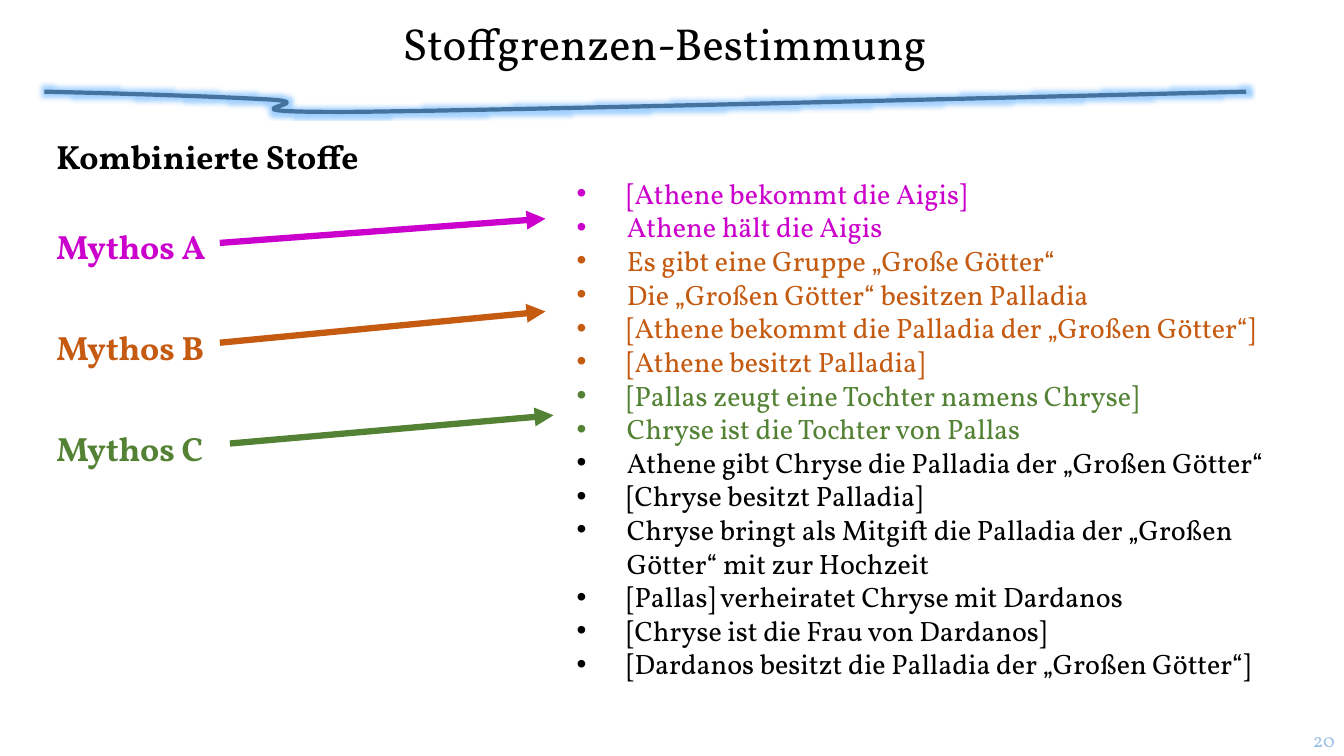
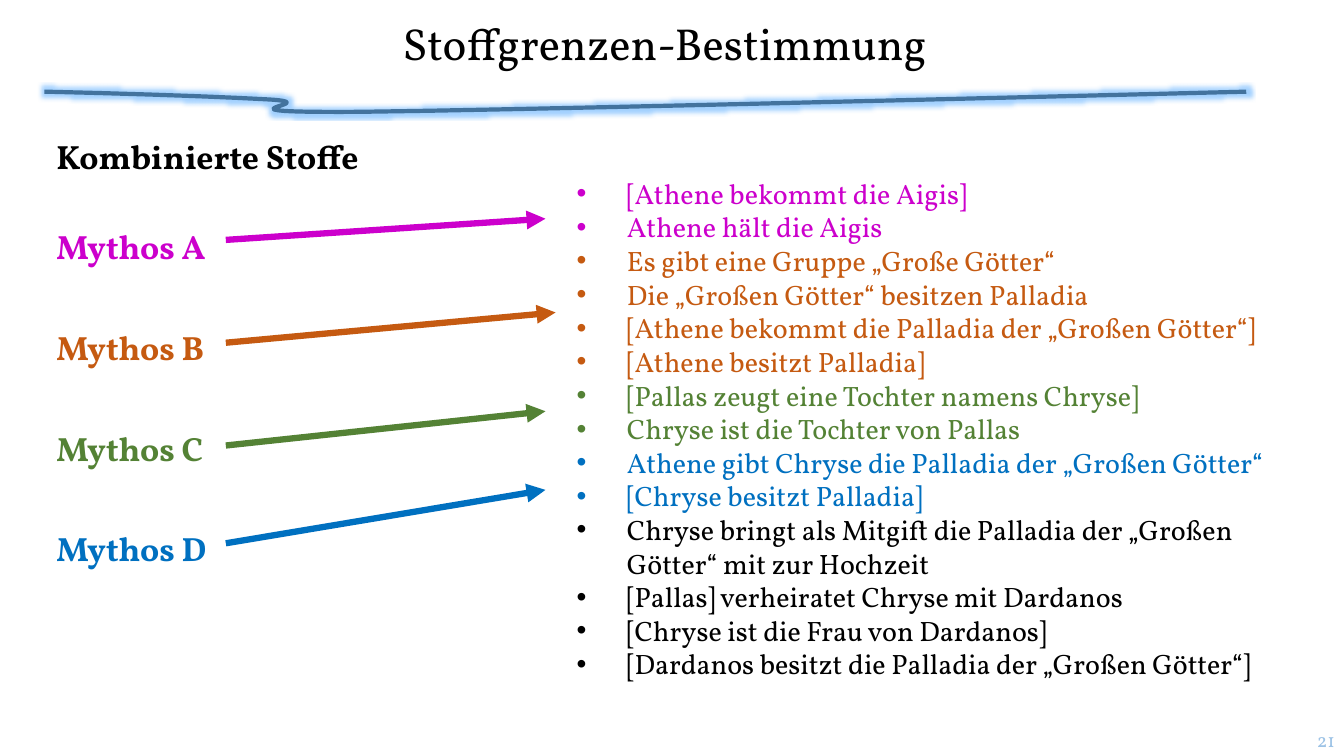
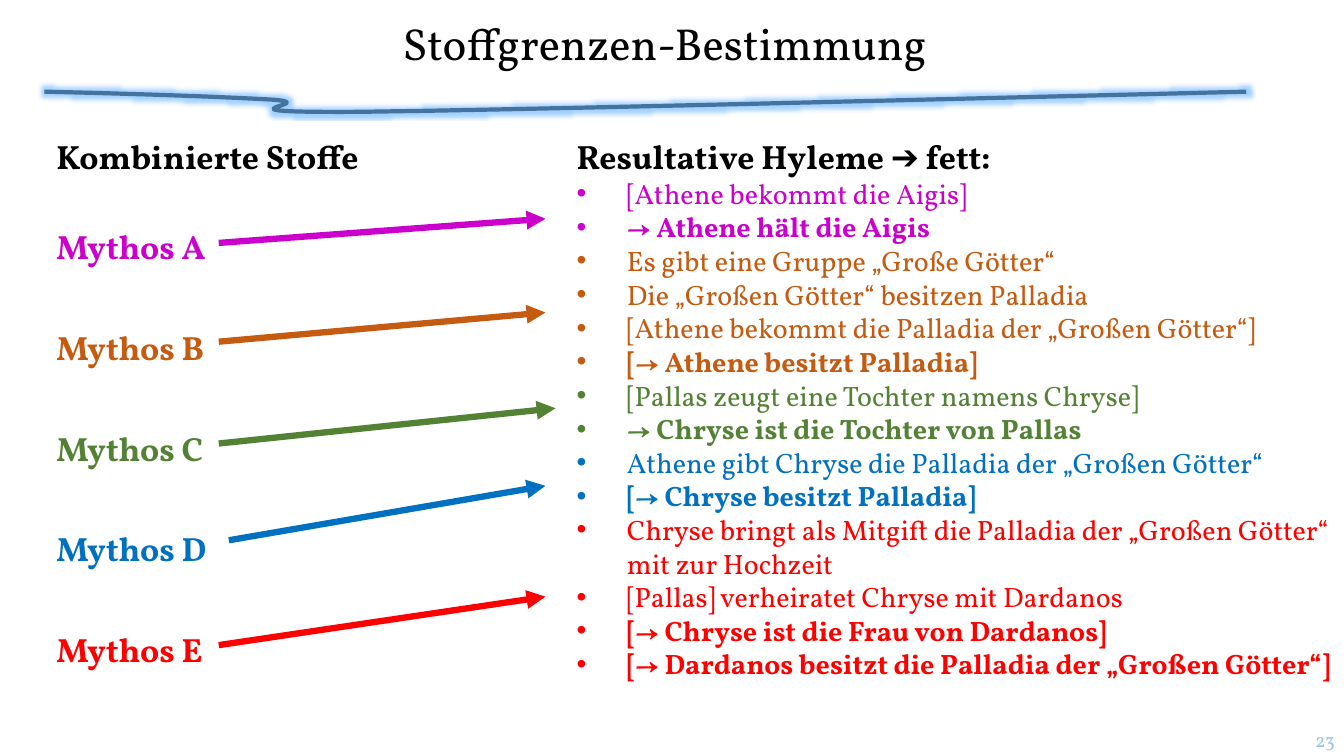
from dataclasses import dataclass
from typing import NamedTuple

from lxml import etree
from pptx import Presentation
from pptx import util as u
from pptx.dml.color import RGBColor
from pptx.enum import shapes, text
from pptx.oxml.ns import qn
from pptx.slide import Slide

FONT = "Vollkorn"
BLACK = "000000"
RULE_BLUE = "43739E"
GLOW_BLUE = "66B3FF"
NUMBER_BLUE = "9DC3E6"

TITLE = "Stoffgrenzen-Bestimmung"
LABEL_HEADING = "Kombinierte Stoffe"
TITLE_ONLY = 5
LINE_HEIGHT = 1.2
HEADING_SIZE = 24
LIST_TOP = 1.3

RULE_START = (0.44, 0.91)
RULE_CURVES = [
    ((1.31, 0.93), (2.19, 0.96), (2.71, 0.99)),
    ((3.23, 1.03), (1.95, 1.12), (3.56, 1.11)),
    ((5.17, 1.09), (8.76, 1.0), (12.36, 0.91)),
]
STEPS_PER_CURVE = 24


class Point(NamedTuple):
    x: float
    y: float


class Box(NamedTuple):
    left: float
    top: float
    width: float
    height: float


class Arrow(NamedTuple):
    start: Point
    end: Point


class Statement(NamedTuple):
    wording: str
    resultative: bool = False


@dataclass
class Myth:
    letter: str
    color: str
    statements: list[Statement]


@dataclass
class Step:
    """One slide: an arrow for every myth identified so far."""
    number: int
    arrows: list[Arrow]
    list_width: float = 7.55
    list_heading: str = ""


MYTHS = [
    Myth("A", "CC00CC", [
        Statement("[Athene bekommt die Aigis]"),
        Statement("Athene hält die Aigis", True),
    ]),
    Myth("B", "C55A11", [
        Statement("Es gibt eine Gruppe „Große Götter“"),
        Statement("Die „Großen Götter“ besitzen Palladia"),
        Statement("[Athene bekommt die Palladia der „Großen Götter“]"),
        Statement("[Athene besitzt Palladia]", True),
    ]),
    Myth("C", "548235", [
        Statement("[Pallas zeugt eine Tochter namens Chryse]"),
        Statement("Chryse ist die Tochter von Pallas", True),
    ]),
    Myth("D", "0070C0", [
        Statement("Athene gibt Chryse die Palladia der „Großen Götter“"),
        Statement("[Chryse besitzt Palladia]", True),
    ]),
    Myth("E", "FF0000", [
        Statement("Chryse bringt als Mitgift die Palladia der „Großen Götter“ mit zur Hochzeit"),
        Statement("[Pallas] verheiratet Chryse mit Dardanos"),
        Statement("[Chryse ist die Frau von Dardanos]", True),
        Statement("[Dardanos besitzt die Palladia der „Großen Götter“]", True),
    ]),
]

STEPS = [
    Step(20, [
        Arrow(Point(2.18, 2.41), Point(5.41, 2.17)),
        Arrow(Point(2.18, 3.4), Point(5.41, 3.09)),
        Arrow(Point(2.28, 4.4), Point(5.49, 4.12)),
    ]),
    Step(21, [
        Arrow(Point(2.24, 2.38), Point(5.41, 2.17)),
        Arrow(Point(2.24, 3.4), Point(5.51, 3.1)),
        Arrow(Point(2.24, 4.42), Point(5.41, 4.08)),
        Arrow(Point(2.24, 5.39), Point(5.41, 4.86)),
    ]),
    Step(23, [
        Arrow(Point(2.17, 2.41), Point(5.41, 2.17)),
        Arrow(Point(2.17, 3.39), Point(5.41, 3.1)),
        Arrow(Point(2.17, 4.4), Point(5.51, 4.05)),
        Arrow(Point(2.27, 5.36), Point(5.41, 4.82)),
        Arrow(Point(2.17, 6.4), Point(5.41, 5.92)),
    ], list_width=7.72, list_heading="Resultative Hyleme ➔ fett:"),
]


def rgb(color: str) -> RGBColor:
    return RGBColor.from_string(color)


def add_run(paragraph, wording: str, size: float, color: str = BLACK, bold: bool = False) -> None:
    run = paragraph.add_run()
    run.text = wording
    run.font.name = FONT
    run.font.size = u.Pt(size)
    run.font.bold = bold
    run.font.color.rgb = rgb(color)


def next_paragraph(frame):
    """Return the untouched first paragraph of a frame, or else a new one."""
    first = frame.paragraphs[0]
    return frame.add_paragraph() if first.runs else first


def add_text_frame(slide: Slide, box: Box):
    frame = slide.shapes.add_textbox(*map(u.Inches, box)).text_frame
    frame.word_wrap = True
    return frame


def add_bullet(paragraph) -> None:
    properties = paragraph._p.get_or_add_pPr()
    properties.set("marL", str(u.Inches(0.5)))
    properties.set("indent", str(u.Inches(-0.5)))
    etree.SubElement(properties, qn("a:buFont")).set("typeface", "Arial")
    etree.SubElement(properties, qn("a:buChar")).set("char", "•")


def set_title(slide: Slide) -> None:
    title = slide.shapes.title
    title.left, title.top, title.width, title.height = map(u.Inches, Box(0.46, 0, 12.27, 0.91))
    frame = title.text_frame
    frame.auto_size = text.MSO_AUTO_SIZE.NONE
    frame.vertical_anchor = text.MSO_ANCHOR.MIDDLE
    paragraph = frame.paragraphs[0]
    paragraph.alignment = text.PP_ALIGN.CENTER
    paragraph.line_spacing = 0.9
    add_run(paragraph, TITLE, 32)


def rule_points() -> list[tuple[int, int]]:
    """Sample the Bézier curves of the title rule."""
    points, start = [], RULE_START
    for first, second, end in RULE_CURVES:
        for step in range(1, STEPS_PER_CURVE + 1):
            t = step / STEPS_PER_CURVE
            weights = ((1 - t) ** 3, 3 * t * (1 - t) ** 2, 3 * t * t * (1 - t), t ** 3)
            corners = (start, first, second, end)
            x, y = (sum(w * c[axis] for w, c in zip(weights, corners)) for axis in (0, 1))
            points.append((u.Inches(x), u.Inches(y)))
        start = end
    return points


def draw_title_rule(slide: Slide) -> None:
    builder = slide.shapes.build_freeform(*map(u.Inches, RULE_START))
    builder.add_line_segments(rule_points(), close=False)
    rule = builder.convert_to_shape()
    rule.fill.background()
    rule.line.color.rgb = rgb(RULE_BLUE)
    rule.line.width = u.Pt(3)
    rule.shadow.inherit = False
    effects = rule.element.spPr.find(qn("a:effectLst"))
    glow = etree.SubElement(effects, qn("a:glow"), rad=str(u.Pt(5)))
    glow_color = etree.SubElement(glow, qn("a:srgbClr"), val=GLOW_BLUE)
    etree.SubElement(glow_color, qn("a:alpha"), val="60000")


def draw_number(slide: Slide, number: int) -> None:
    frame = add_text_frame(slide, Box(12.61, 7.19, 0.73, 0.29))
    frame.vertical_anchor = text.MSO_ANCHOR.MIDDLE
    paragraph = frame.paragraphs[0]
    paragraph.alignment = text.PP_ALIGN.RIGHT
    add_run(paragraph, str(number), 14, NUMBER_BLUE)


def draw_labels(slide: Slide, myths: list[Myth]) -> None:
    frame = add_text_frame(slide, Box(0.46, 1.34, 5.32, 6))
    heading = frame.paragraphs[0]
    heading.line_spacing = 0.9
    add_run(heading, LABEL_HEADING, HEADING_SIZE, bold=True)
    for index, myth in enumerate(myths):
        paragraph = frame.add_paragraph()
        paragraph.line_spacing = 0.9
        paragraph.space_before = u.Pt(46 if index else 39)
        add_run(paragraph, f"Mythos {myth.letter}", HEADING_SIZE, myth.color, bold=True)


def mark_resultative(wording: str) -> str:
    return f"[→ {wording[1:]}" if wording.startswith("[") else f"→ {wording}"


def draw_statements(slide: Slide, step: Step) -> None:
    """List all statements; those of myths not yet identified stay black."""
    skipped = 0 if step.list_heading else HEADING_SIZE * LINE_HEIGHT / 72
    frame = add_text_frame(slide, Box(5.62, LIST_TOP + skipped, step.list_width, 5.55 - skipped))
    if step.list_heading:
        add_run(frame.paragraphs[0], step.list_heading, HEADING_SIZE, bold=True)
    for index, myth in enumerate(MYTHS):
        color = myth.color if index < len(step.arrows) else BLACK
        for statement in myth.statements:
            marked = bool(step.list_heading) and statement.resultative
            wording = mark_resultative(statement.wording) if marked else statement.wording
            paragraph = next_paragraph(frame)
            add_bullet(paragraph)
            add_run(paragraph, wording, 20, color, bold=marked)


def draw_arrow(slide: Slide, arrow: Arrow, color: str) -> None:
    connector = slide.shapes.add_connector(
        shapes.MSO_CONNECTOR.STRAIGHT, *map(u.Inches, (*arrow.start, *arrow.end)))
    connector.line.color.rgb = rgb(color)
    connector.line.width = u.Pt(4.5)
    properties = connector.element.spPr
    etree.SubElement(properties.find(qn("a:ln")), qn("a:tailEnd"), type="triangle")
    etree.SubElement(properties, qn("a:effectLst"))


def build_slide(presentation, step: Step) -> None:
    slide = presentation.slides.add_slide(presentation.slide_layouts[TITLE_ONLY])
    identified = MYTHS[:len(step.arrows)]
    draw_title_rule(slide)
    set_title(slide)
    draw_labels(slide, identified)
    draw_number(slide, step.number)
    draw_statements(slide, step)
    for myth, arrow in zip(identified, step.arrows):
        draw_arrow(slide, arrow, myth.color)


def main() -> None:
    presentation = Presentation()
    presentation.slide_width = u.Inches(13.33)
    presentation.slide_height = u.Inches(7.5)
    for step in STEPS:
        build_slide(presentation, step)
    presentation.save("out.pptx")


if __name__ == "__main__":
    main()
